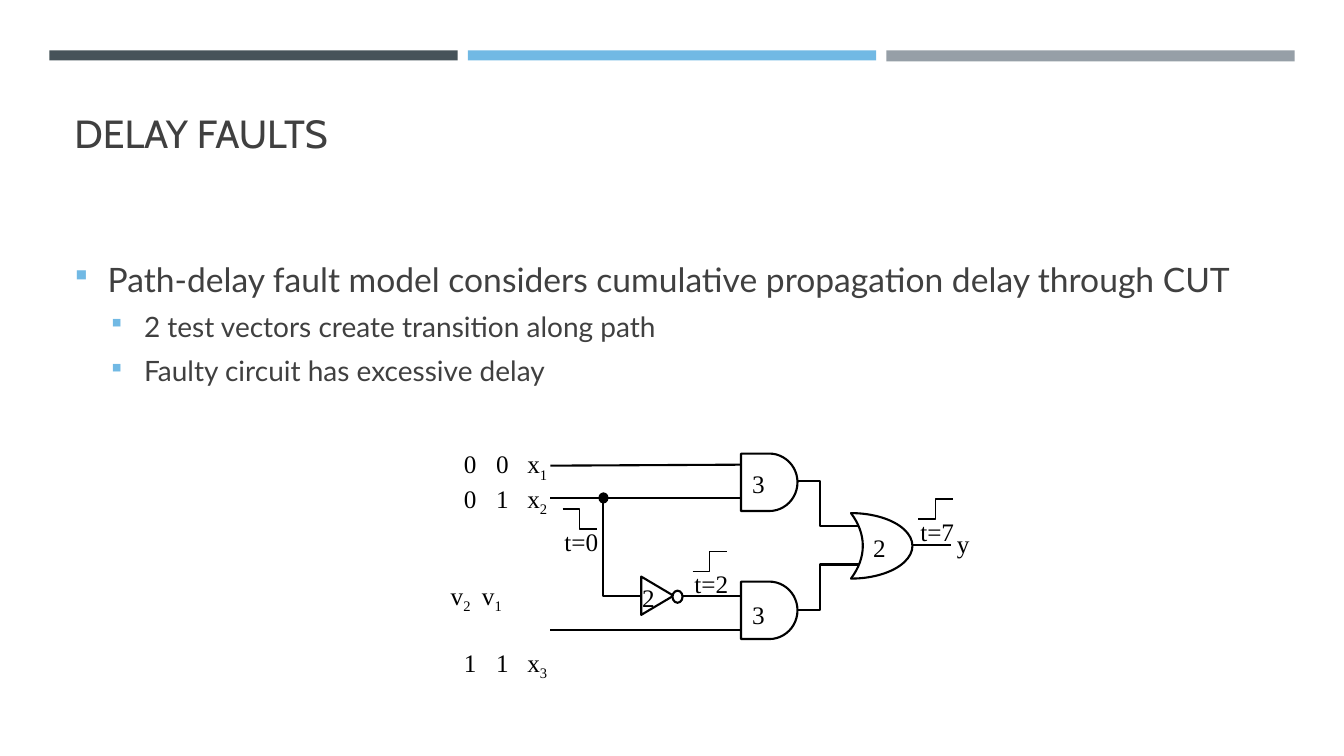
from dataclasses import dataclass

from lxml import etree
from pptx import Presentation
from pptx import util as u
from pptx.dml.color import RGBColor
from pptx.enum import shapes, text
from pptx.oxml.ns import qn

PX = 9144  # 100 px to the inch

BLACK = RGBColor(0x00, 0x00, 0x00)
WHITE = RGBColor(0xFF, 0xFF, 0xFF)
GREY = RGBColor(0x40, 0x40, 0x40)
SLATE = RGBColor(0x46, 0x53, 0x59)
SKY = RGBColor(0x71, 0xB9, 0xE4)
STEEL = RGBColor(0x96, 0x9F, 0xA7)

SERIF = "Times New Roman"
KIND = shapes.MSO_SHAPE
LEFT, MID, RIGHT = text.PP_ALIGN.LEFT, text.PP_ALIGN.CENTER, text.PP_ALIGN.RIGHT


@dataclass
class Box:
    left: int
    top: int
    width: int
    height: int

    def emu(self) -> list[int]:
        return [n * PX for n in (self.left, self.top, self.width, self.height)]


@dataclass
class Part:
    kind: KIND
    box: Box
    fill: RGBColor = WHITE
    line: float = 1.5
    turn: int = 0
    flip: bool = False
    adjust: float | None = None


@dataclass
class Wire:
    points: list[tuple[int, int]]
    width: float = 1.5


@dataclass
class Label:
    words: str
    box: Box
    inset: int = 8
    align: text.PP_ALIGN = LEFT


@dataclass
class Row:
    """Runs alternate between normal text and subscript."""
    runs: list[str]
    stops: list[int]
    before: int = 0


@dataclass
class Item:
    words: str
    size: int
    level: int


BARS = [(SLATE, 10), (SKY, 10), (STEEL, 11)]
PARTS = [
    Part(KIND.FLOWCHART_DELAY, Box(735, 577, 56, 57)),
    Part(KIND.FLOWCHART_DELAY, Box(735, 450, 56, 57)),
    Part(KIND.MOON, Box(844, 509, 61, 65), flip=True, adjust=0.807),
    Part(KIND.ISOSCELES_TRIANGLE, Box(633, 575, 38, 32), turn=90),
    Part(KIND.OVAL, Box(667, 586, 10, 12)),
    Part(KIND.OVAL, Box(594, 489, 9, 10), fill=BLACK, line=0.75),
]
WIRES = [
    Wire([(906, 541), (943, 541)]),
    Wire([(598, 495), (598, 591), (734, 591)]),
    Wire([(734, 494), (546, 494)]),
    Wire([(734, 625), (546, 625)]),
    Wire([(734, 461), (546, 462)]),
    Wire([(791, 605), (813, 605), (813, 560), (877, 560)]),
    Wire([(790, 477), (813, 477), (813, 522), (877, 522)]),
]
LABELS = [
    Label("y", Box(941, 523, 32, 43)),
    Label("2", Box(629, 577, 26, 31), align=MID),
    Label("3", Box(738, 594, 26, 31)),
    Label("3", Box(738, 464, 26, 31)),
    Label("2", Box(858, 527, 26, 31)),
]
# time, left, top, rising edge
EDGES = [("t=0", 558, 505, False), ("t=2", 687, 547, True), ("t=7", 911, 495, True)]
COLS = [13, 45, 76]
INPUTS = [
    Row(["\t0\t0\tx", "1"], COLS),
    Row(["\t0\t1\tx", "2"], COLS),
    Row(["v", "2", "\tv", "1"], [31], before=45),
    Row(["\t1\t1\tx", "3"], COLS, before=23),
]
ITEMS = [
    Item("Path-delay fault model considers cumulative propagation delay through CUT", 24, 0),
    Item("2 test vectors create transition along path", 20, 1),
    Item("Faulty circuit has excessive delay", 20, 1),
]


def add_part(slide, part: Part) -> None:
    shape = slide.shapes.add_shape(part.kind, *part.box.emu())
    shape.shadow.inherit = False
    shape.fill.solid()
    shape.fill.fore_color.rgb = part.fill
    if part.line:
        shape.line.color.rgb = BLACK
        shape.line.width = u.Pt(part.line)
    else:
        shape.line.fill.background()
    shape.rotation = part.turn
    if part.flip:
        shape._element.spPr.find(qn("a:xfrm")).set("flipH", "1")
    if part.adjust is not None:
        shape.adjustments[0] = part.adjust


def add_wire(slide, wire: Wire) -> None:
    """Draw two points as a connector and more as an open outline."""
    start, *rest = wire.points
    if len(rest) == 1:
        ends = [n * PX for n in start + rest[0]]
        line = slide.shapes.add_connector(shapes.MSO_CONNECTOR.STRAIGHT, *ends)
        etree.SubElement(line._element.spPr, qn("a:effectLst"))
    else:
        path = slide.shapes.build_freeform(*start, scale=PX)
        path.add_line_segments(rest, close=False)
        line = path.convert_to_shape()
        line.shadow.inherit = False
        line.fill.background()
    line.line.color.rgb = BLACK
    line.line.width = u.Pt(wire.width)


def add_frame(slide, box: Box, side: int = 10, top: int = 5, base: int = 5):
    frame = slide.shapes.add_textbox(*box.emu()).text_frame
    frame.word_wrap = True
    frame.margin_left = frame.margin_right = side * PX
    frame.margin_top, frame.margin_bottom = top * PX, base * PX
    return frame


def add_run(para, words: str, size: int, face: str, color: RGBColor):
    run = para.add_run()
    run.text = words
    run.font.size = u.Pt(size)
    run.font.name = face
    run.font.color.rgb = color
    return run


def add_label(slide, label: Label) -> None:
    pad = 1 if label.inset else 0
    para = add_frame(slide, label.box, label.inset, pad, pad).paragraphs[0]
    para.alignment = label.align
    add_run(para, label.words, 18, SERIF, BLACK)


def add_edge(slide, time: str, left: int, top: int, rise: bool) -> None:
    """Draw a signal step with its time below."""
    first, last = (top + 20, top) if rise else (top, top + 20)
    mid, end = left + 17, left + 34
    add_wire(slide, Wire([(left, first), (mid, first), (mid, last), (end, last)], 1))
    add_label(slide, Label(time, Box(left + 1, top + 17, 35, 31), 0, MID))


def next_para(frame, index: int):
    return frame.add_paragraph() if index else frame.paragraphs[0]


def add_inputs(slide) -> None:
    frame = add_frame(slide, Box(439, 444, 112, 196), 8, 1, 1)
    for i, row in enumerate(INPUTS):
        para = next_para(frame, i)
        para.space_before = u.Pt(row.before)
        tabs = etree.SubElement(para._p.get_or_add_pPr(), qn("a:tabLst"))
        for stop in row.stops:
            etree.SubElement(tabs, qn("a:tab"), pos=str(stop * PX), algn="l")
        for j, words in enumerate(row.runs):
            run = add_run(para, words, 18, SERIF, BLACK)
            if j % 2:
                run.font._element.set("baseline", "-25000")


def add_items(slide) -> None:
    frame = add_frame(slide, Box(64, 256, 1206, 397))
    for i, item in enumerate(ITEMS):
        para = next_para(frame, i)
        para.level = item.level
        para.line_spacing = 0.9
        para.space_before = u.Pt(item.size * 0.2)
        para.space_after = u.Pt(6)
        props = para._p.get_or_add_pPr()
        props.set("marL", str((33 + 36 * item.level) * PX))
        props.set("indent", str(-33 * PX))
        tint = etree.SubElement(props, qn("a:buClr"))
        etree.SubElement(tint, qn("a:srgbClr"), val=str(SKY))
        etree.SubElement(props, qn("a:buSzPct"), val="92000")
        etree.SubElement(props, qn("a:buFont"), typeface="Wingdings")
        etree.SubElement(props, qn("a:buChar"), char="§")
        add_run(para, item.words, item.size, "Lato", GREY)


def main() -> None:
    deck = Presentation()
    deck.slide_width, deck.slide_height = 1333 * PX, 750 * PX
    slide = deck.slides.add_slide(deck.slide_layouts[6])
    for i, (color, height) in enumerate(BARS):
        add_part(slide, Part(KIND.RECTANGLE, Box(49 + 415 * i, 50, 405, height), color, 0))
    title = add_frame(slide, Box(64, 77, 1206, 130), base=52)
    title.vertical_anchor = text.MSO_ANCHOR.BOTTOM
    add_run(title.paragraphs[0], "DELAY FAULTS", 28, "Cabin", GREY)
    add_inputs(slide)
    for wire in WIRES:
        add_wire(slide, wire)
    for part in PARTS:
        add_part(slide, part)
    for label in LABELS:
        add_label(slide, label)
    for edge in EDGES:
        add_edge(slide, *edge)
    add_items(slide)
    deck.save("out.pptx")


if __name__ == "__main__":
    main()
